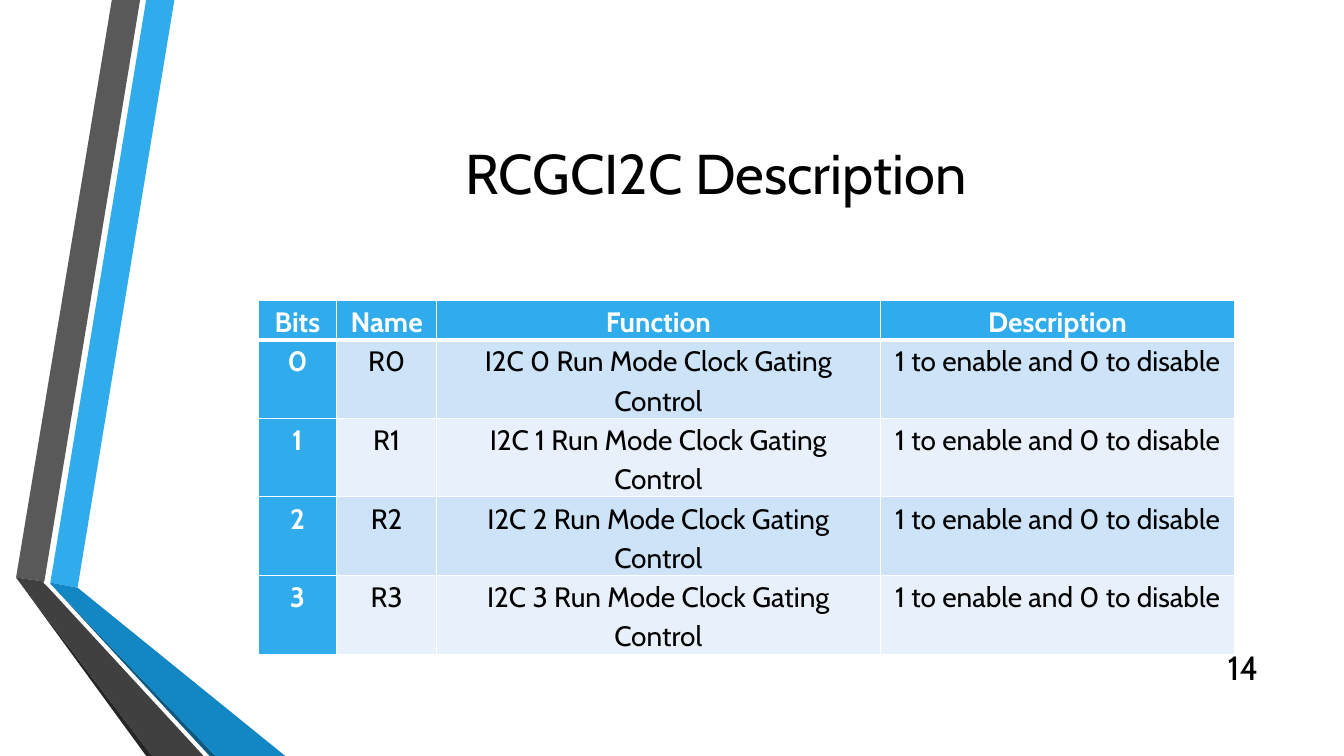
"""Build the RCGCI2C register description slide."""
from lxml import etree
from pptx import Presentation
from pptx import util as u
from pptx.dml.color import RGBColor
from pptx.enum import text
from pptx.oxml.ns import qn

COLORS = {
    "blue": "30ACEC", "blue_mid": "1287C3", "blue_dark": "0C5A82",
    "gray": "595959", "gray_mid": "404040", "gray_dark": "262626",
    "band_odd": "CDE3F8", "band_even": "E8F1FB",
    "white": "FFFFFF", "black": "000000",
}


def write(tf, words, size, color, align, bold=False, spacing=1.0):
    p = tf.paragraphs[0]
    p.alignment, p.line_spacing = align, spacing
    r = p.add_run()
    r.text = words
    for name, value in {"name": "Cabin", "size": u.Pt(size), "bold": bold}.items():
        setattr(r.font, name, value)
    r.font.color.rgb = RGBColor.from_string(COLORS[color])


def add_border(cell, side, points):
    ln = etree.SubElement(cell._tc.get_or_add_tcPr(), qn(f"a:ln{side}"), w=str(u.Pt(points)))
    fill = etree.SubElement(ln, qn("a:solidFill"))
    etree.SubElement(fill, qn("a:srgbClr"), val=COLORS["white"])


prs = Presentation()
prs.slide_width, prs.slide_height = u.Inches(13.33), u.Inches(7.5)
s = prs.slides.add_slide(prs.slide_layouts[6])

ribbons = [
    ("blue", [(0.5, 5.78), (0.77, 5.83), (1.73, 0), (1.45, 0)]),
    ("gray", [(1.39, 0), (1.11, 0), (0.16, 5.73), (0.44, 5.77)]),
    ("gray_dark", [(0.16, 5.73), (1.45, 7.5), (1.51, 7.5)]),
    ("blue_dark", [(0.5, 5.79), (2.08, 7.5), (2.14, 7.5)]),
    ("blue_mid", [(0.5, 5.78), (0.5, 5.79), (2.14, 7.5), (2.83, 7.5), (0.77, 5.83)]),
    ("gray_mid", [(2.02, 7.5), (0.48, 5.83), (0.43, 5.78), (0.44, 5.77), (0.16, 5.73), (1.51, 7.5)]),
]
for color, points in ribbons:
    corners = [(u.Inches(x), u.Inches(y)) for x, y in points]
    builder = s.shapes.build_freeform(*corners[0])
    builder.add_line_segments(corners[1:], close=True)
    sp = builder.convert_to_shape()
    sp.shadow.inherit = False
    sp.fill.solid()
    sp.fill.fore_color.rgb = RGBColor.from_string(COLORS[color])
    sp.line.fill.background()

labels = [
    ("RCGCI2C Description", 40, text.PP_ALIGN.CENTER, (1.62, 0.75, 10.96, 1.92)),
    ("14", 24, text.PP_ALIGN.RIGHT, (11.98, 6.42, 0.6, 0.4)),
]
for words, size, align, box in labels:
    tf = s.shapes.add_textbox(*map(u.Inches, box)).text_frame
    tf.word_wrap = True
    tf.vertical_anchor = text.MSO_ANCHOR.MIDDLE
    write(tf, words, size, "black", align)

rows = [("Bits", "Name", "Function", "Description")]
for bit in range(4):
    rows.append((str(bit), f"R{bit}", f"I2C {bit} Run Mode Clock Gating Control",
                 "1 to enable and 0 to disable"))
widths = [0.78, 0.99, 4.4, 3.52]
heights = [0.39] + [0.78] * 4
margins = {"margin_left": 0.07, "margin_right": 0.07, "margin_top": 0, "margin_bottom": 0}

table = s.shapes.add_table(len(rows), len(widths), u.Inches(2.56), u.Inches(2.98),
                           u.Inches(sum(widths)), u.Inches(sum(heights))).table
for column, width in zip(table.columns, widths):
    column.width = u.Inches(width)
for i, row in enumerate(rows):
    table.rows[i].height = u.Inches(heights[i])
    for j, words in enumerate(row):
        cell = table.cell(i, j)
        for name, value in margins.items():
            setattr(cell, name, u.Inches(value))
        heading = i == 0 or j == 0
        for side in "LRTB":
            add_border(cell, side, 3 if (i, side) in [(0, "B"), (1, "T")] else 1)
        band = "band_odd" if i % 2 else "band_even"
        cell.fill.solid()
        cell.fill.fore_color.rgb = RGBColor.from_string(COLORS["blue" if heading else band])
        write(cell.text_frame, words, 20, "white" if heading else "black",
              text.PP_ALIGN.CENTER, heading, 1.15)

prs.save("out.pptx")
